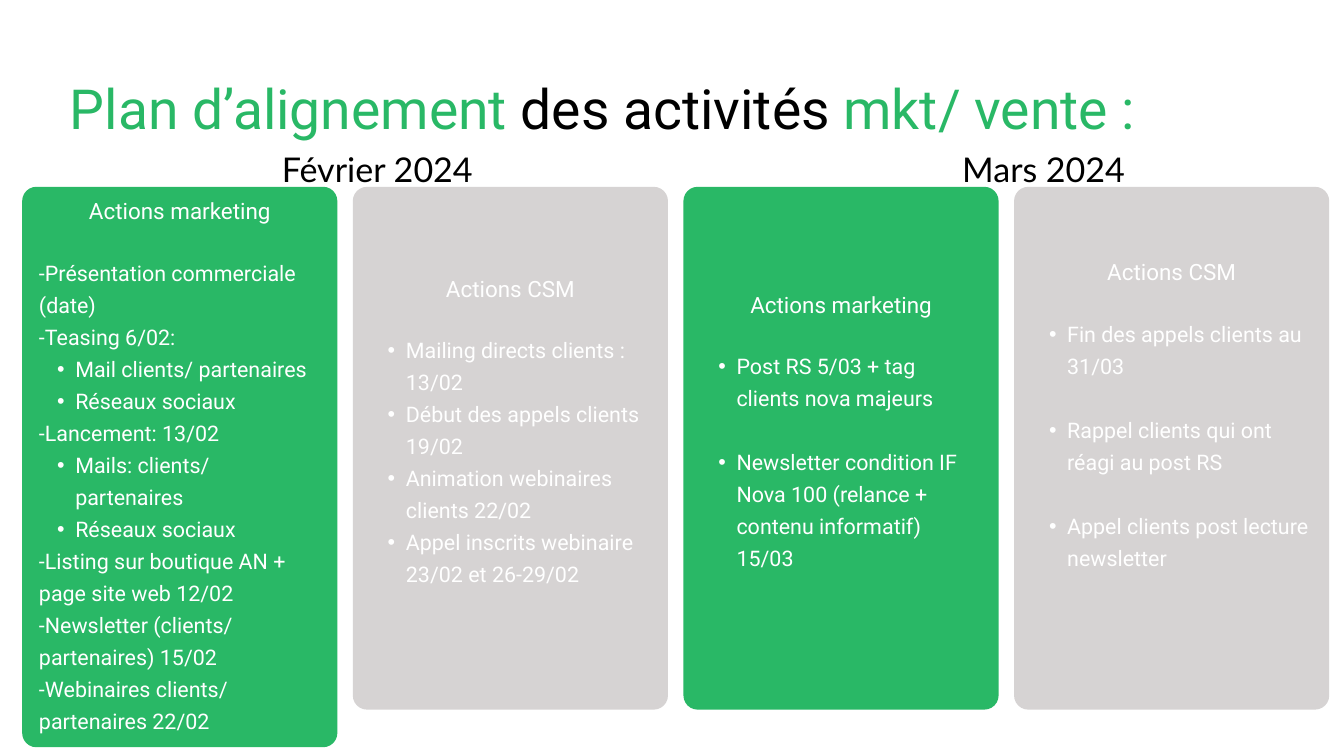
from pptx import Presentation
from pptx.dml.color import RGBColor as Rgb
from pptx.enum.shapes import MSO_SHAPE as Shape
from pptx.enum.text import MSO_ANCHOR as Anchor, MSO_AUTO_SIZE as Auto, PP_ALIGN as Align
from pptx.oxml.xmlchemy import OxmlElement as Node
from pptx.util import Inches, Pt

HUES = {"green": "29B866", "grey": "D6D3D3", "white": "FFFFFF", "black": "000000"}
COLS, ROWS = 20, 11.25
LEFT, TOP, WIDE, STEP = 0.33, 2.78, 4.69, 4.92
LINE = 34.3

TITLE = [("Plan d’alignement ", "green"), ("des activités", "black"), (" mkt/ vente :", "green")]
MONTHS = [("Février 2024", 4.08, 3.07), ("Mars 2024", 14.25, 2.56)]
PLANS = [
    ("Actions marketing", "green", 8.34, 0, 0, [
        "-Présentation commerciale (date)", "-Teasing 6/02:",
        "•Mail clients/ partenaires", "•Réseaux sociaux",
        "-Lancement: 13/02", "•Mails: clients/ partenaires", "•Réseaux sociaux",
        "-Listing sur boutique AN + page site web 12/02",
        "-Newsletter (clients/ partenaires) 15/02",
        "-Webinaires clients/ partenaires 22/02"]),
    ("Actions CSM", "grey", 7.78, 0, 1, [
        "•Mailing directs clients : 13/02", "•Début des appels clients 19/02",
        "•Animation webinaires clients 22/02",
        "•Appel inscrits webinaire 23/02 et 26-29/02"]),
    ("Actions marketing", "green", 7.78, LINE, 1, [
        "•Post RS 5/03 + tag clients nova majeurs",
        "•Newsletter condition IF Nova 100 (relance + contenu informatif) 15/03"]),
    ("Actions CSM", "grey", 7.78, LINE, 2, [
        "•Fin des appels clients au 31/03", "•Rappel clients qui ont réagi au post RS",
        "•Appel clients post lecture newsletter"]),
]


class Deck:
    def __init__(self):
        self.prs = Presentation()
        self.prs.slide_width, self.prs.slide_height = Inches(COLS), Inches(ROWS)
        self.slide = self.prs.slides.add_slide(self.prs.slide_layouts.get_by_name("Comparison"))

    def box(self, x, y, w, h):
        col, row = self.prs.slide_width / COLS, self.prs.slide_height / ROWS
        return [round(n) for n in (x * col, y * row, w * col, h * row)]

    def place(self, shape, *area):
        shape.left, shape.top, shape.width, shape.height = self.box(*area)

    def frame(self, shape, pad=0, foot=0, anchor=Anchor.TOP):
        frame = shape.text_frame
        frame.word_wrap, frame.auto_size = True, Auto.NONE
        frame.vertical_anchor = anchor
        frame.margin_left = frame.margin_right = frame.margin_top = Inches(pad)
        frame.margin_bottom = Inches(pad) + Pt(foot)
        return frame

    def style(self, para, size, line, hue="white", face="Roboto", align=Align.LEFT, after=0):
        para.alignment, para.line_spacing = align, Pt(line)
        para.space_before, para.space_after = Pt(0), Pt(after)
        for run in para.runs:
            font = run.font
            font.size, font.name, font.bold = Pt(size), face, False
            font.color.rgb = Rgb.from_string(HUES[hue])

    def bullet(self, para, mark):
        props = para._p.get_or_add_pPr()
        props.set("marL", str(Inches(0.54 if mark else 0)))
        props.set("indent", str(Inches(-0.27 if mark else 0)))
        node = Node("a:buChar" if mark else "a:buNone")
        if mark:
            para.level = 1
            node.set("char", "•")
        props.append(node)

    def title(self, parts):
        shape = self.slide.shapes.title
        self.place(shape, 1.04, 0.82, 18.96, 1.19)
        para = self.frame(shape).paragraphs[0]
        for text, hue in parts:
            para.add_run().text = text
        self.style(para, 59.2, 91.2)
        for run, (text, hue) in zip(para.runs, parts):
            run.font.color.rgb = Rgb.from_string(HUES[hue])

    def month(self, text, x, w):
        frame = self.frame(self.slide.shapes.add_textbox(*self.box(x, 2.1, w, 0.68)))
        frame.word_wrap = False
        frame.text = text
        self.style(frame.paragraphs[0], 36.5, 51.2, "black", "Lato", Align.CENTER)

    def card(self, x, h, hue):
        shapes = self.slide.shapes
        card = shapes.add_shape(Shape.ROUNDED_RECTANGLE, *self.box(x, TOP, WIDE, h))
        card.adjustments[0] = 0.045
        card.shadow.inherit = False
        card.fill.solid()
        card.fill.fore_color.rgb = Rgb.from_string(HUES[hue])
        card.line.fill.background()
        shapes._spTree.insert(2, card._element)

    def plan(self, slot, x, head, h, gap, rest, items):
        body = self.slide.placeholders[slot]
        self.place(body, x, TOP - 0.08, WIDE, h + 0.08)
        frame = self.frame(body, 0.25, rest * LINE, Anchor.MIDDLE)
        frame.text = "\n".join([head] + [item.lstrip("•") for item in items])
        top, *paras = frame.paragraphs
        self.style(top, 24, 31.2, align=Align.CENTER, after=31.2)
        self.bullet(top, False)
        for para, item in zip(paras, items):
            self.style(para, 23, LINE, after=0 if item is items[-1] else gap)
            self.bullet(para, item.startswith("•"))


def main():
    deck = Deck()
    deck.title(TITLE)
    for month in MONTHS:
        deck.month(*month)
    for i, (head, hue, h, gap, rest, items) in enumerate(PLANS):
        x = LEFT + i * STEP
        deck.card(x, h, hue)
        deck.plan(i + 1, x, head, h, gap, rest, items)
    deck.prs.save("out.pptx")


if __name__ == "__main__":
    main()
